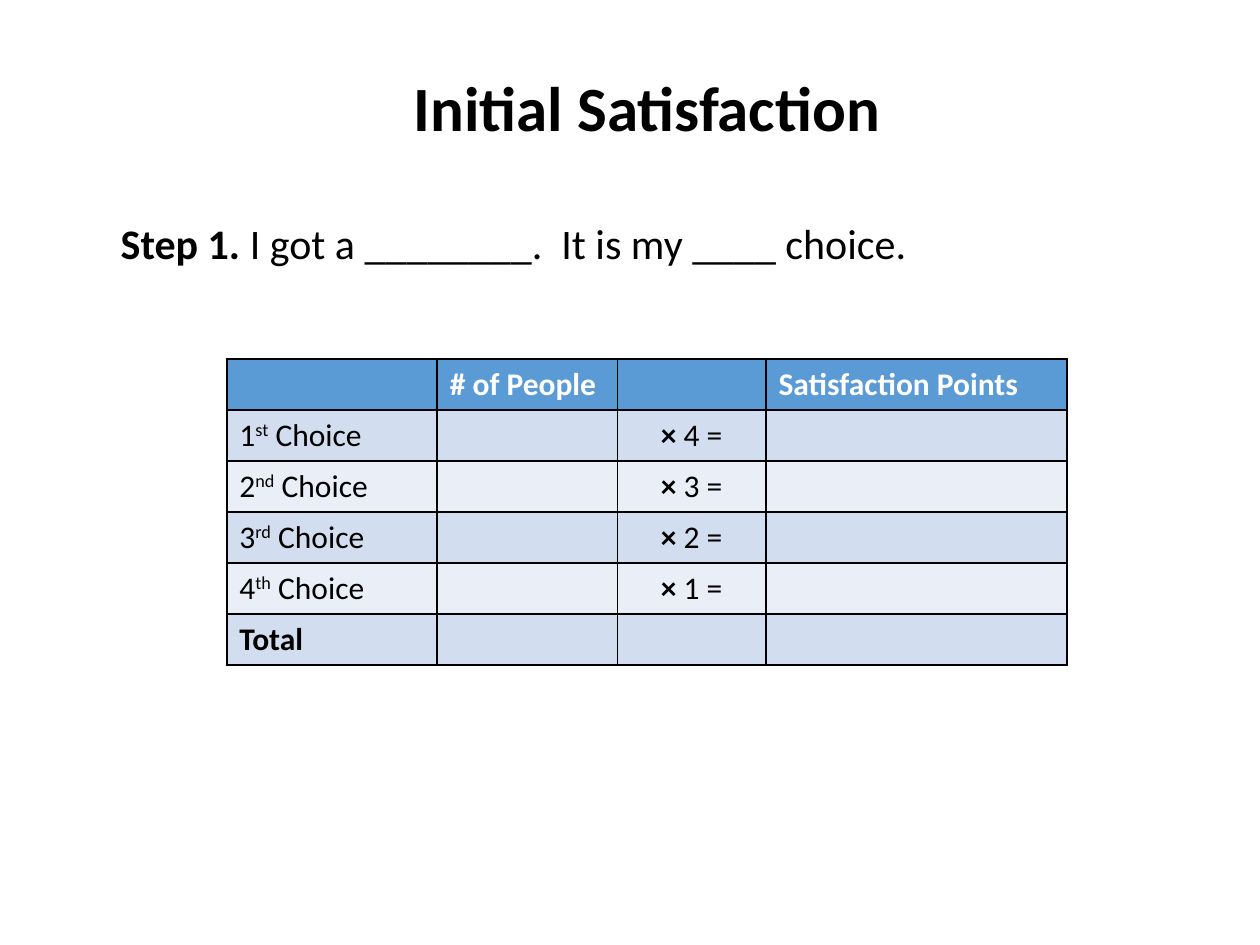
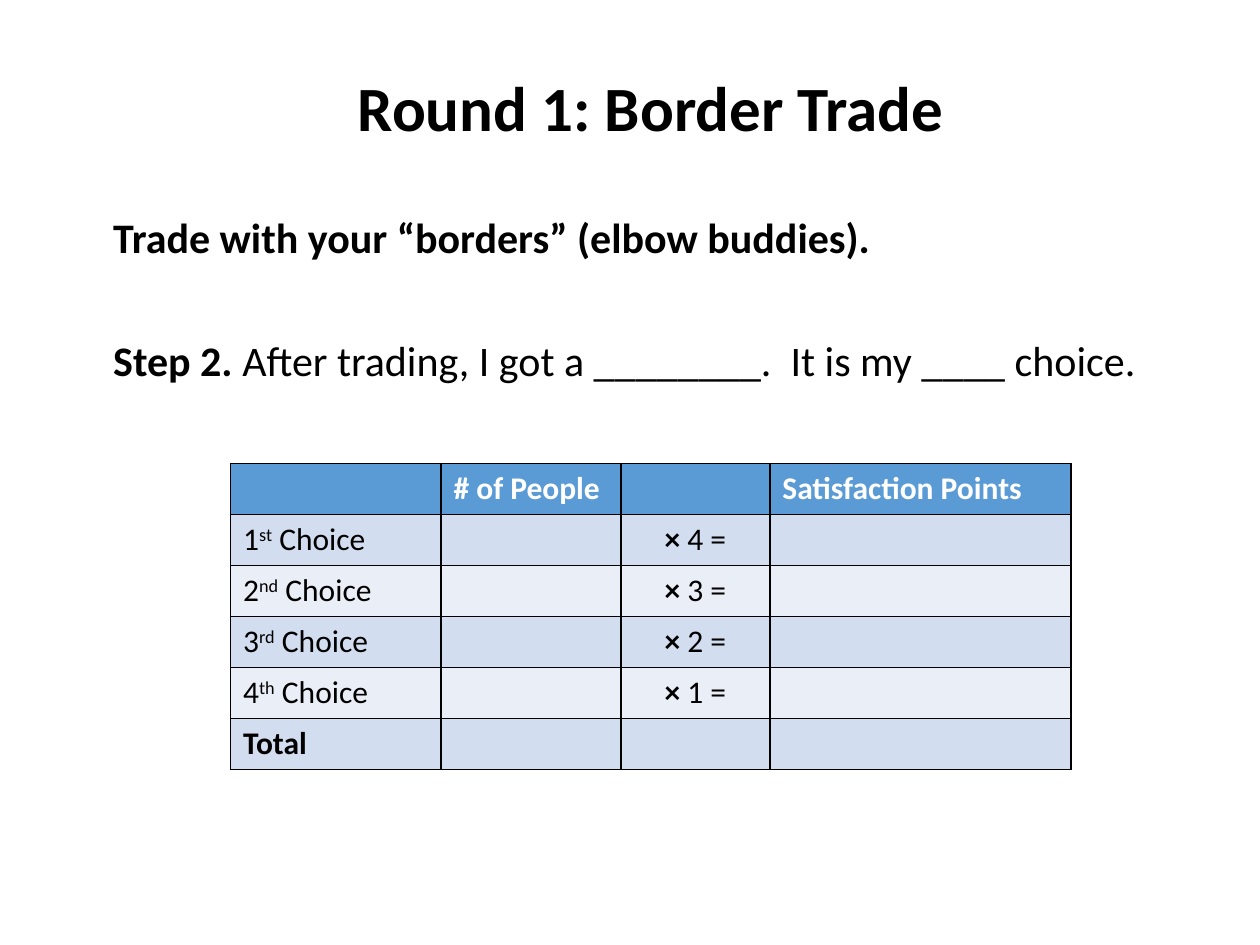
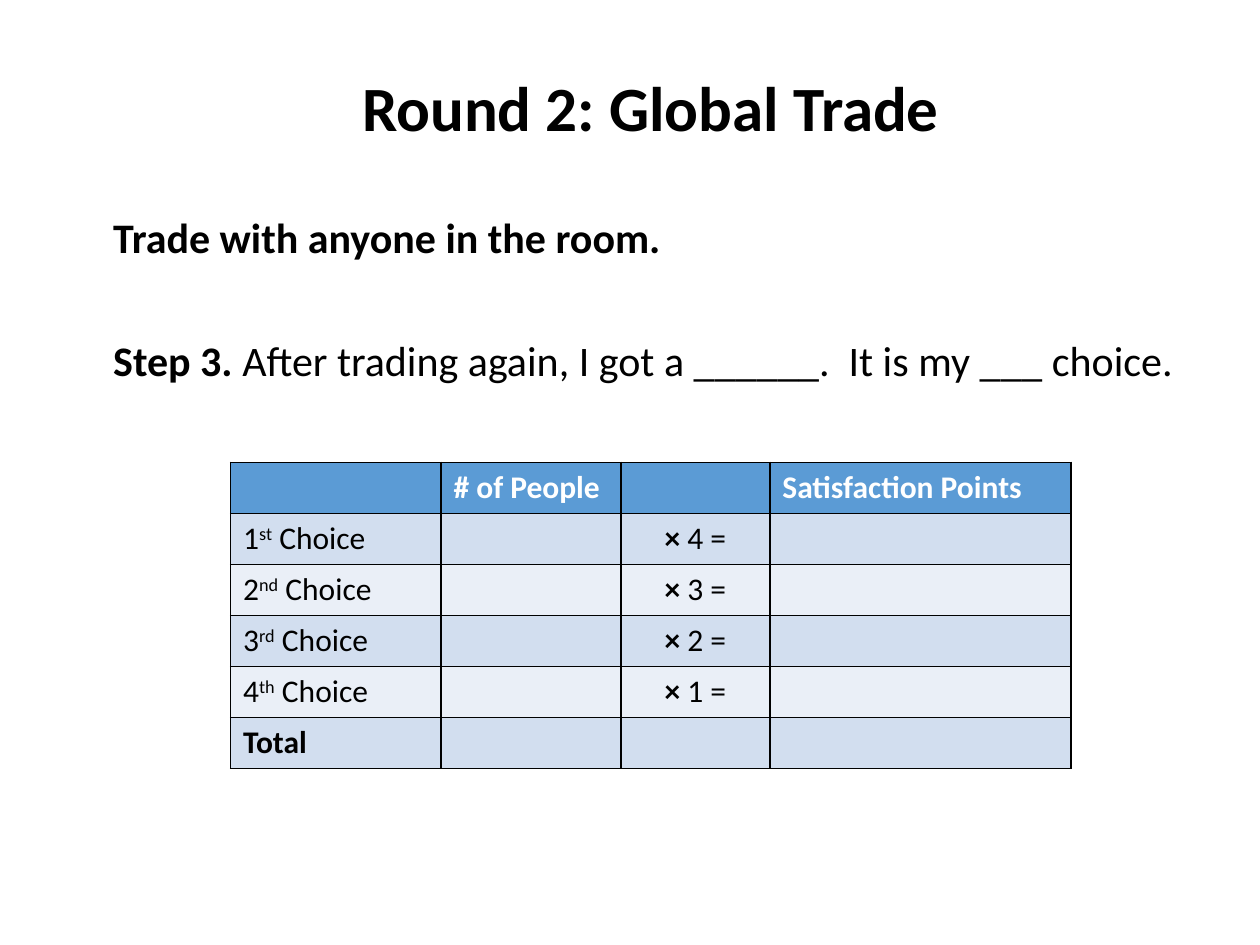
"""Build three worksheet slides for a trading game about satisfaction."""
from lxml import etree
from pptx import Presentation, util as u
from pptx.dml.color import RGBColor
from pptx.enum import text
from pptx.oxml import ns

BLACK = RGBColor(0x00, 0x00, 0x00)
WHITE = RGBColor(0xFF, 0xFF, 0xFF)
HEADER_BLUE = RGBColor(0x5B, 0x9B, 0xD5)
DARK_BAND = RGBColor(0xD2, 0xDE, 0xEF)
LIGHT_BAND = RGBColor(0xEA, 0xEF, 0xF7)

GRID_COLUMNS, GRID_ROWS = 100, 75
TABLE_WIDTHS = (16.7, 14.3, 11.8, 23.9)
TABLE_ROW = 4.05
SUFFIXES = ("st", "nd", "rd", "th")


class Worksheet:
    """Hold the shared style and the slide being filled."""

    font = "Calibri"
    title_size, body_size, table_size = 36, 24, 18

    def __init__(self):
        self.presentation = Presentation()
        self.presentation.slide_width = u.Inches(10)
        self.presentation.slide_height = u.Inches(7.5)
        self.slide = None

    def box(self, left, top, width, height):
        """Convert grid columns and rows to slide lengths."""
        column = self.presentation.slide_width / GRID_COLUMNS
        row = self.presentation.slide_height / GRID_ROWS
        return [u.Emu(round(length)) for length in
                (left * column, top * row, width * column, height * row)]

    def style(self, run, size, bold=False, color=BLACK):
        """Format one run."""
        run.font.name = self.font
        run.font.size = u.Pt(size)
        run.font.bold = bold
        run.font.color.rgb = color

    def add_runs(self, paragraph, pieces, size, color=BLACK):
        """Fill a paragraph from (words, bold) pieces and return its runs."""
        runs = []
        for words, bold in pieces:
            run = paragraph.add_run()
            run.text = words
            self.style(run, size, bold, color)
            runs.append(run)
        return runs

    def title(self, words, left):
        """Start a slide with a centred bold title."""
        self.slide = self.presentation.slides.add_slide(self.presentation.slide_layouts[5])
        shape = self.slide.shapes.title
        shape.left, shape.top, shape.width, shape.height = self.box(
            left, 4.9, sum(TABLE_WIDTHS), 7.1)
        frame = shape.text_frame
        frame.text = words
        frame.auto_size = text.MSO_AUTO_SIZE.NONE
        frame.vertical_anchor = text.MSO_ANCHOR.TOP
        paragraph = frame.paragraphs[0]
        paragraph.alignment = text.PP_ALIGN.CENTER
        self.style(paragraph.runs[0], self.title_size, True)

    def steps(self, lines, left, top, width, height):
        """Add the instruction lines, set apart by paragraph spacing."""
        shape = self.slide.shapes.add_textbox(*self.box(left, top, width, height))
        frame = shape.text_frame
        frame.word_wrap = True
        for index, pieces in enumerate(lines):
            paragraph = frame.add_paragraph() if index else frame.paragraphs[0]
            self.add_runs(paragraph, pieces, self.body_size)
            if index < len(lines) - 1:
                paragraph.space_after = u.Pt(41.3)

    def cell(self, cell, fill):
        """Give a cell black borders and a solid fill."""
        properties = cell._tc.get_or_add_tcPr()
        for side in ("a:lnL", "a:lnR", "a:lnT", "a:lnB"):
            line = etree.SubElement(properties, ns.qn(side), w=str(u.Pt(1)))
            solid = etree.SubElement(line, ns.qn("a:solidFill"))
            etree.SubElement(solid, ns.qn("a:srgbClr"), val=str(BLACK))
        cell.fill.solid()
        cell.fill.fore_color.rgb = fill

    def points_table(self, left, top):
        """Add the table that turns choices into satisfaction points."""
        row_count = len(SUFFIXES) + 2
        shape = self.slide.shapes.add_table(
            row_count, len(TABLE_WIDTHS),
            *self.box(left, top, sum(TABLE_WIDTHS), row_count * TABLE_ROW))
        table = shape.table
        for column, width in zip(table.columns, TABLE_WIDTHS):
            column.width = self.box(0, 0, width, 0)[2]
        for index, row in enumerate(table.rows):
            band = DARK_BAND if index % 2 else LIGHT_BAND
            for cell in row.cells:
                self.cell(cell, band if index else HEADER_BLUE)

        def fill_in(row, column, pieces, color=BLACK):
            paragraph = table.cell(row, column).text_frame.paragraphs[0]
            return paragraph, self.add_runs(paragraph, pieces, self.table_size, color)

        fill_in(0, 1, [("# of People", True)], WHITE)
        fill_in(0, 3, [("Satisfaction Points", True)], WHITE)
        for rank, suffix in enumerate(SUFFIXES, 1):
            _, runs = fill_in(rank, 0, [(str(rank), False), (suffix, False), (" Choice", False)])
            runs[1].font._element.set("baseline", "30000")
            points = len(SUFFIXES) + 1 - rank
            paragraph, _ = fill_in(rank, 2, [("×", True), (f" {points} =", False)])
            paragraph.alignment = text.PP_ALIGN.CENTER
        fill_in(row_count - 1, 0, [("Total", True)])


def main():
    """Build and save the worksheet."""
    sheet = Worksheet()

    sheet.title("Initial Satisfaction", 18)
    sheet.steps([[("Step 1.", True), (" I got a ________.  It is my ____ choice.", False)]],
                8.6, 16.8, 91.4, 8.1)
    sheet.points_table(18, 28.5)

    rounds = (
        ("Round 1: Border Trade", "Trade with your “borders” (elbow buddies).", "Step 2.",
         " After trading, I got a ________.  It is my ____ choice.", 36.8),
        ("Round 2: Global Trade", "Trade with anyone in the room.", "Step 3.",
         " After trading again, I got a ______.  It is my ___ choice.", 36.7),
    )
    for title, rule, step, sentence, table_top in rounds:
        sheet.title(title, 18.3)
        sheet.steps([[(rule, True)], [(step, True), (sentence, False)]], 8, 16.3, 87.2, 18.8)
        sheet.points_table(18.3, table_top)

    sheet.presentation.save("out.pptx")


if __name__ == "__main__":
    main()
